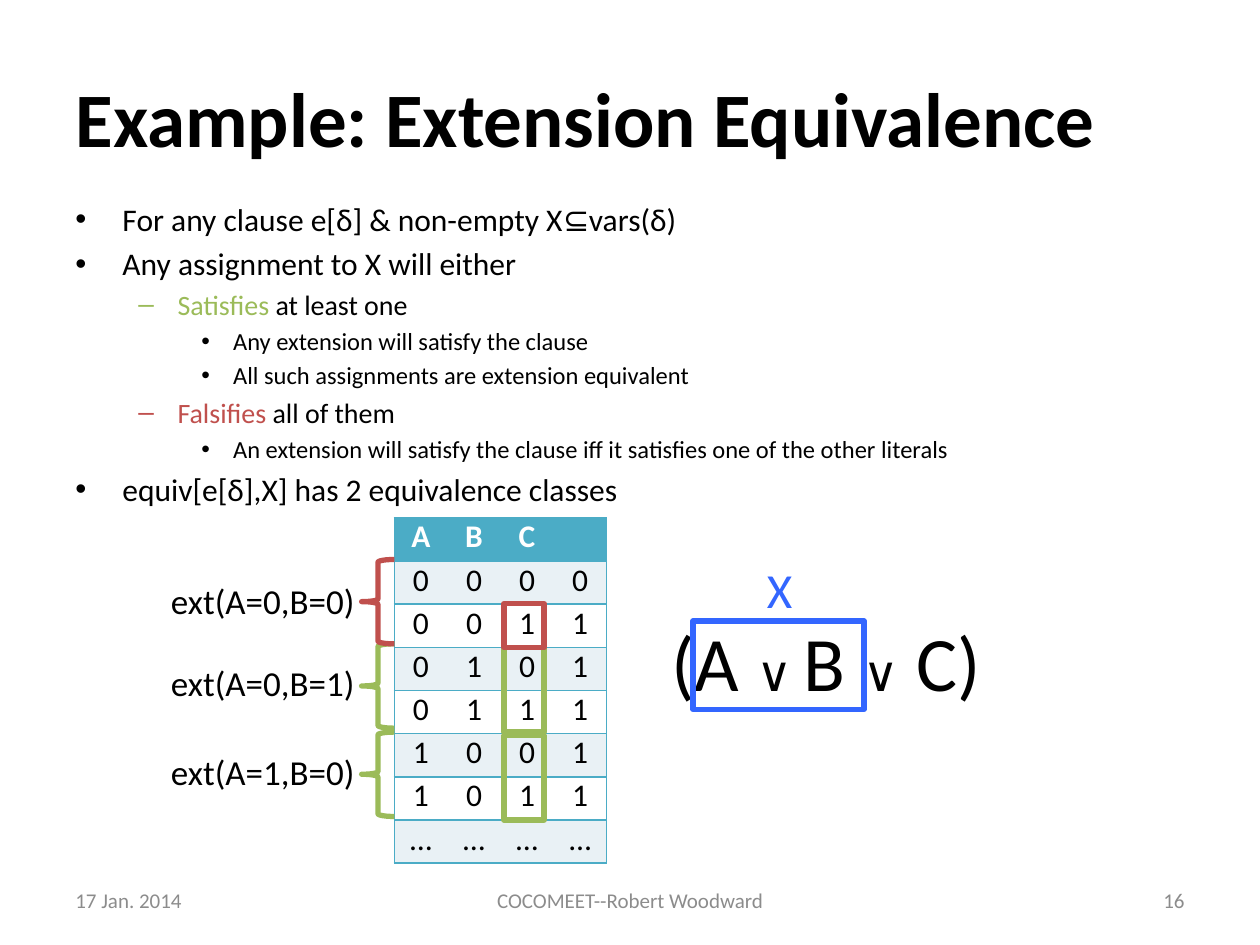
from dataclasses import dataclass

from lxml import etree
from pptx import Presentation
from pptx import util as u
from pptx.dml.color import RGBColor
from pptx.enum import shapes, text
from pptx.oxml import ns

ALIGN = text.PP_ALIGN
ANCHOR = text.MSO_ANCHOR


@dataclass(frozen=True)
class Theme:
    font: str = "Calibri"
    ink: str = "000000"
    paper: str = "FFFFFF"
    muted: str = "8C8C8C"
    satisfied: str = "9BBB59"
    falsified: str = "C0504D"
    highlight: str = "3366FF"
    header: str = "4BACC6"
    band: str = "E9F1F5"
    title: int = 44
    symbol: int = 28
    label: int = 20
    cell: int = 18
    footer: int = 12
    outline: int = 3
    levels: tuple = (18, 16, 14)


THEME = Theme()


def write(paragraph, content, size=18, color=THEME.ink, bold=False, align=None):
    run = paragraph.add_run()
    run.text = content
    run.font.name = THEME.font
    run.font.size = u.Pt(size)
    run.font.bold = bold
    run.font.color.rgb = RGBColor.from_string(color)
    if align is not None:
        paragraph.alignment = align


def add_element(parent, tag, **attributes):
    return etree.SubElement(parent, ns.qn(tag), **attributes)


class SlideBuilder:
    INDENTS = ((0.95, "•"), (0.79, "–"), (0.64, "•"))
    MARGINS = (0.95, 2.06, 3.18)

    def __init__(self, theme, slide):
        self.theme = theme
        self.slide = slide

    def title(self, content, left, top, width, height):
        heading = self.slide.shapes.title
        heading.left, heading.top = u.Cm(left), u.Cm(top)
        heading.width, heading.height = u.Cm(width), u.Cm(height)
        heading.text_frame.vertical_anchor = ANCHOR.MIDDLE
        write(heading.text_frame.paragraphs[0], content, size=self.theme.title,
              bold=True, align=ALIGN.LEFT)

    def frame(self, left, top, width, height, anchor=ANCHOR.TOP):
        box = self.slide.shapes.add_textbox(
            u.Cm(left), u.Cm(top), u.Cm(width), u.Cm(height))
        box.text_frame.word_wrap = True
        box.text_frame.vertical_anchor = anchor
        return box.text_frame

    def line(self, content, left, top, width, height, anchor=ANCHOR.TOP, **fmt):
        frame = self.frame(left, top, width, height, anchor)
        write(frame.paragraphs[0], content, **fmt)

    def formula(self, parts, left, top, width, height):
        paragraph = self.frame(left, top, width, height).paragraphs[0]
        for content, size in parts:
            write(paragraph, content, size=size)

    def outline(self, items, left, top, width, height):
        """Bulleted list of (level, [(text, colour), ...]) items."""
        frame = self.frame(left, top, width, height)
        for index, (level, parts) in enumerate(items):
            paragraph = frame.add_paragraph() if index else frame.paragraphs[0]
            size = self.theme.levels[level]
            hanging, bullet = self.INDENTS[level]
            paragraph.level = level
            paragraph.space_before = u.Pt(size * 0.2)
            properties = paragraph._p.get_or_add_pPr()
            properties.set("marL", str(u.Cm(self.MARGINS[level])))
            properties.set("indent", str(-u.Cm(hanging)))
            add_element(properties, "a:buFont", typeface="Arial")
            add_element(properties, "a:buChar", char=bullet)
            for content, color in parts:
                write(paragraph, content, size=size, color=color)

    def mark(self, preset, color, left, top, width, height):
        """Unfilled preset shape that points out a part of the content."""
        shape = self.slide.shapes.add_shape(
            preset, u.Cm(left), u.Cm(top), u.Cm(width), u.Cm(height))
        shape.shadow.inherit = False
        shape.fill.background()
        shape.line.color.rgb = RGBColor.from_string(color)
        shape.line.width = u.Pt(self.theme.outline)

    def border(self, cell, side, visible):
        edge = add_element(cell._tc.get_or_add_tcPr(), f"a:ln{side}",
                           w=str(u.Pt(1)))
        if visible:
            fill = add_element(edge, "a:solidFill")
            add_element(fill, "a:srgbClr", val=self.theme.header)
        else:
            add_element(edge, "a:noFill")

    def table(self, rows, left, top, column_width, row_height):
        columns = len(rows[0])
        table = self.slide.shapes.add_table(
            len(rows), columns, u.Cm(left), u.Cm(top),
            u.Cm(column_width * columns), u.Cm(row_height * len(rows))).table
        table.horz_banding = False
        for column in table.columns:
            column.width = u.Cm(column_width)
        for r, values in enumerate(rows):
            table.rows[r].height = u.Cm(row_height)
            banded = self.theme.band if r % 2 else self.theme.paper
            for c, value in enumerate(values):
                cell = table.cell(r, c)
                cell.margin_left = cell.margin_right = 0
                cell.margin_top = cell.margin_bottom = 0
                edges = {"L": c == 0, "R": c == columns - 1, "T": True, "B": True}
                for side, visible in edges.items():
                    self.border(cell, side, visible)
                cell.fill.solid()
                cell.fill.fore_color.rgb = RGBColor.from_string(
                    banded if r else self.theme.header)
                if value:
                    write(cell.text_frame.paragraphs[0], value,
                          size=self.theme.cell, bold=r == 0, align=ALIGN.CENTER,
                          color=self.theme.ink if r else self.theme.paper)


OUTLINE = [
    (0, [("For any clause e[δ] & non-empty X⊆vars(δ)", THEME.ink)]),
    (0, [("Any assignment to X will either", THEME.ink)]),
    (1, [("Satisfies", THEME.satisfied), (" at least one", THEME.ink)]),
    (2, [("Any extension will satisfy the clause", THEME.ink)]),
    (2, [("All such assignments are extension equivalent", THEME.ink)]),
    (1, [("Falsifies", THEME.falsified), (" all of them", THEME.ink)]),
    (2, [("An extension will satisfy the clause iff it satisfies one of the "
          "other literals", THEME.ink)]),
    (0, [("equiv[e[δ],X] has 2 equivalence classes", THEME.ink)]),
]
TRUTH_TABLE = [("A", "B", "C", ""), *map(tuple, (
    "0000", "0011", "0101", "0111", "1001", "1011", "…" * 4))]
CLAUSE = [("(A ", THEME.title), ("∨ ", THEME.symbol), ("B ", THEME.title),
          ("∨", THEME.symbol), (" C)", THEME.title)]
# label, colour, label top, brace top, box top, box height
EXTENSIONS = [
    ("ext(A=0,B=1)", THEME.satisfied, 13.21, 12.98, 13.06, 1.7),
    ("ext(A=1,B=0)", THEME.satisfied, 15.01, 14.76, 14.83, 1.7),
    ("ext(A=0,B=0)", THEME.falsified, 11.56, 11.28, 12.17, 0.89),
]
FOOTER = [
    ("17 Jan. 2014", 1.27, 5.92, ALIGN.LEFT),
    ("COCOMEET--Robert Woodward", 7.65, 10.11, ALIGN.CENTER),
    ("16", 18.21, 5.92, ALIGN.RIGHT),
]


def main():
    deck = Presentation()
    deck.slide_width, deck.slide_height = u.Cm(25.4), u.Cm(19.05)
    builder = SlideBuilder(THEME, deck.slides.add_slide(deck.slide_layouts[5]))

    builder.title("Example: Extension Equivalence", 1.27, 0.76, 22.86, 3.18)
    builder.outline(OUTLINE, 1.27, 3.91, 24.13, 6.5)
    for content, left, width, align in FOOTER:
        builder.line(content, left, 17.65, width, 1.01, anchor=ANCHOR.MIDDLE,
                     size=THEME.footer, color=THEME.muted, align=align)

    builder.formula(CLAUSE, 13.28, 12.27, 8.97, 2.13)
    builder.mark(shapes.MSO_SHAPE.RECTANGLE, THEME.highlight,
                 13.97, 12.52, 3.45, 1.78)
    builder.line("X", 15.21, 11.15, 2.24, 1.45, size=THEME.symbol,
                 color=THEME.highlight)

    builder.table(TRUTH_TABLE, 7.95, 10.44, 1.07, 0.87)
    for label, color, label_top, brace_top, box_top, box_height in EXTENSIONS:
        builder.mark(shapes.MSO_SHAPE.LEFT_BRACE, color, 7.29, brace_top, 0.66, 1.7)
        builder.mark(shapes.MSO_SHAPE.RECTANGLE, color, 10.16, box_top, 0.81,
                     box_height)
        builder.line(label, 1.68, label_top, 5.72, 1.12, size=THEME.label,
                     align=ALIGN.RIGHT)

    deck.save("out.pptx")


if __name__ == "__main__":
    main()
